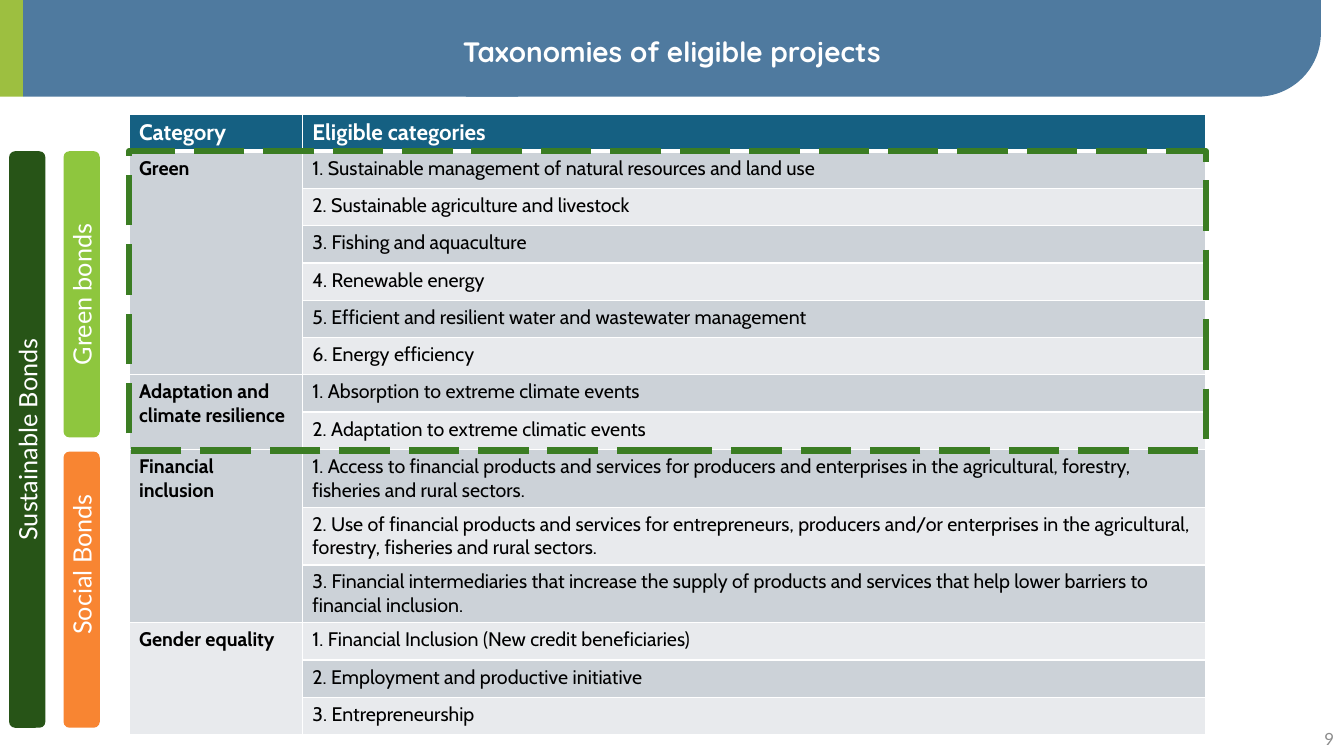
import math
from dataclasses import dataclass

import lxml.etree
import pptx
import pptx.dml.color
import pptx.enum.dml
import pptx.enum.shapes
import pptx.enum.text
import pptx.oxml.ns
import pptx.util

WIDTH = pptx.util.Inches(13.33)
HEIGHT = pptx.util.Inches(7.5)
SHAPE = pptx.enum.shapes.MSO_SHAPE
ALIGN = pptx.enum.text.PP_ALIGN
MIDDLE = pptx.enum.text.MSO_ANCHOR.MIDDLE

WHITE, BLACK = "FFFFFF", "000000"
BANNER_BLUE, BANNER_GREEN = "4F7A9F", "9DBF40"
HEADER_FILL = "156082"
BAND_FILLS = ("E8EAED", "CCD2D8")


def across(percent: float) -> int:
    return round(WIDTH * percent / 100)


def down(percent: float) -> int:
    return round(HEIGHT * percent / 100)


@dataclass
class Frame:
    """A rectangle in percent of the slide's width and height."""
    left: float
    top: float
    width: float
    height: float

    def lengths(self) -> tuple[int, int, int, int]:
        return across(self.left), down(self.top), across(self.width), down(self.height)


@dataclass
class Style:
    font: str
    size: int
    color: str
    bold: bool = False


@dataclass
class BondBar:
    label: str
    frame: Frame
    fill: str
    indent: float = 0


@dataclass
class Category:
    name: str
    projects: list[str]
    row_height: float = 4.93


BANNER_HEIGHT = 12.8
TABLE_LEFT, TABLE_TOP = 9.6, 15.07
COLUMN_WIDTHS = (12.9, 67.22)
HEADER_HEIGHT = 4.93
BARS_TOP = 20

BARS = [
    BondBar("Green bonds", Frame(4.73, BARS_TOP, 2.7, 37.87), "8EC63E"),
    BondBar("Social Bonds", Frame(4.73, 59.73, 2.7, 36.53), "F88532", indent=0.5),
    BondBar("Sustainable Bonds", Frame(0.68, BARS_TOP, 2.7, 76.27), "275417"),
]
CATEGORIES = [
    Category("Green", [
        "1. Sustainable management of natural resources and land use",
        "2. Sustainable agriculture and livestock",
        "3. Fishing and aquaculture",
        "4. Renewable energy",
        "5. Efficient and resilient water and wastewater management",
        "6. Energy efficiency",
    ]),
    Category("Adaptation and climate resilience", [
        "1. Absorption to extreme climate events",
        "2. Adaptation to extreme climatic events",
    ]),
    Category("Financial inclusion", [
        "1. Access to financial products and services for producers and enterprises "
        "in the agricultural, forestry, fisheries and rural sectors.",
        "2. Use of financial products and services for entrepreneurs, producers and/or "
        "enterprises in the agricultural, forestry, fisheries and rural sectors.",
        "3. Financial intermediaries that increase the supply of products and services "
        "that help lower barriers to financial inclusion.",
    ], row_height=7.6),
    Category("Gender equality", [
        "1. Financial Inclusion (New credit beneficiaries)",
        "2. Employment and productive initiative",
        "3. Entrepreneurship",
    ]),
]


def rgb(color: str) -> pptx.dml.color.RGBColor:
    return pptx.dml.color.RGBColor.from_string(color)


def paint(shape, fill: str) -> None:
    shape.shadow.inherit = False
    shape.fill.solid()
    shape.fill.fore_color.rgb = rgb(fill)
    shape.line.fill.background()


def write(text_frame, text: str, style: Style, align=ALIGN.LEFT):
    para = text_frame.paragraphs[0]
    para.alignment = align
    span = para.add_run()
    span.text = text
    span.font.name = style.font
    span.font.size = pptx.util.Pt(style.size)
    span.font.bold = style.bold
    span.font.color.rgb = rgb(style.color)
    return para


def add_block(page, kind, frame: Frame, fill: str):
    block = page.shapes.add_shape(kind, *frame.lengths())
    paint(block, fill)
    return block


def add_banner(page) -> None:
    left, right, bottom = across(34.66), across(98.28), down(BANNER_HEIGHT)
    radius = across(4.73)
    steps = 24
    angles = [math.pi / 2 * step / steps for step in range(steps + 1)]
    corner = [(round(right - radius + radius * math.cos(angle)),
               round(bottom - radius + radius * math.sin(angle))) for angle in angles]
    outline = page.shapes.build_freeform(left, 0)
    outline.add_line_segments([(right, 0), *corner, (left, bottom)], close=True)
    paint(outline.convert_to_shape(), BANNER_BLUE)
    add_block(page, SHAPE.RECTANGLE, Frame(0, 0, 1.73, BANNER_HEIGHT), BANNER_GREEN)
    add_block(page, SHAPE.RECTANGLE, Frame(1.73, 0, 36.83, BANNER_HEIGHT), BANNER_BLUE)


def place_title(page, text: str) -> None:
    title = page.shapes.title
    title.left, title.top, title.width, title.height = Frame(2.4, 1.73, 95.2, 10).lengths()
    title.text_frame.vertical_anchor = MIDDLE
    write(title.text_frame, text, Style("Quicksand", 20, WHITE, True), ALIGN.CENTER)
    page.shapes._spTree.append(title._element)


def border_cell(cell, bottom_points: int) -> None:
    """Draw white borders; they must precede the fill in the cell's properties."""
    properties = cell._tc.get_or_add_tcPr()
    for position, side in enumerate(("lnL", "lnR", "lnT", "lnB")):
        points = bottom_points if side == "lnB" else 1
        line = lxml.etree.Element(pptx.oxml.ns.qn(f"a:{side}"), w=str(pptx.util.Pt(points)))
        solid = lxml.etree.SubElement(line, pptx.oxml.ns.qn("a:solidFill"))
        lxml.etree.SubElement(solid, pptx.oxml.ns.qn("a:srgbClr"), val=WHITE)
        properties.insert(position, line)


def format_cell(cell, fill: str, bottom_points: int = 1) -> None:
    cell.fill.solid()
    cell.fill.fore_color.rgb = rgb(fill)
    border_cell(cell, bottom_points)


def add_category_table(page) -> None:
    heights = [HEADER_HEIGHT] + [c.row_height for c in CATEGORIES for _ in c.projects]
    frame = Frame(TABLE_LEFT, TABLE_TOP, sum(COLUMN_WIDTHS), sum(heights))
    table = page.shapes.add_table(len(heights), len(COLUMN_WIDTHS), *frame.lengths()).table
    table.horz_banding = False
    for column, width in zip(table.columns, COLUMN_WIDTHS):
        column.width = across(width)
    for row, height in zip(table.rows, heights):
        row.height = down(height)
    for column, heading in enumerate(("Category", "Eligible categories")):
        cell = table.cell(0, column)
        format_cell(cell, HEADER_FILL, bottom_points=3)
        write(cell.text_frame, heading, Style("Cabin", 16, WHITE, True))
    first = 1
    for category in CATEGORIES:
        last = first + len(category.projects) - 1
        for row, project in enumerate(category.projects, first):
            format_cell(table.cell(row, 0), BAND_FILLS[first % 2])
            format_cell(table.cell(row, 1), BAND_FILLS[row % 2])
            write(table.cell(row, 1).text_frame, project, Style("Cabin", 14, BLACK))
        name_cell = table.cell(first, 0)
        name_cell.merge(table.cell(last, 0))
        write(name_cell.text_frame, category.name, Style("Cabin", 14, BLACK, True))
        first = last + 1


def add_bond_bar(page, bar: BondBar) -> None:
    box = add_block(page, SHAPE.ROUNDED_RECTANGLE, bar.frame, bar.fill)
    box.text_frame.vertical_anchor = MIDDLE
    box.text_frame._txBody.bodyPr.set("vert", "vert270")
    para = write(box.text_frame, bar.label, Style("Lato", 18, WHITE), ALIGN.CENTER)
    if bar.indent:
        para._p.get_or_add_pPr().set("marL", str(pptx.util.Inches(bar.indent)))


def add_green_outline(page) -> None:
    frame = Frame(TABLE_LEFT, BARS_TOP, sum(COLUMN_WIDTHS), 39.6)
    box = page.shapes.add_shape(SHAPE.RECTANGLE, *frame.lengths())
    box.shadow.inherit = False
    box.fill.background()
    box.line.color.rgb = rgb("3B7D23")
    box.line.width = pptx.util.Pt(4.5)
    box.line.dash_style = pptx.enum.dml.MSO_LINE.LONG_DASH


def add_page_number(page, number: str) -> None:
    box = page.shapes.add_textbox(*Frame(77.5, 95.07, 22.5, 5.33).lengths())
    box.text_frame.word_wrap = True
    box.text_frame.vertical_anchor = MIDDLE
    write(box.text_frame, number, Style("Lato", 12, "8C8C8C"), ALIGN.RIGHT)


def main() -> None:
    deck = pptx.Presentation()
    deck.slide_width, deck.slide_height = WIDTH, HEIGHT
    page = deck.slides.add_slide(deck.slide_layouts[5])
    add_banner(page)
    place_title(page, "Taxonomies of eligible projects")
    add_category_table(page)
    for bar in BARS:
        add_bond_bar(page, bar)
    add_green_outline(page)
    add_page_number(page, "9")
    deck.save("out.pptx")


if __name__ == "__main__":
    main()
